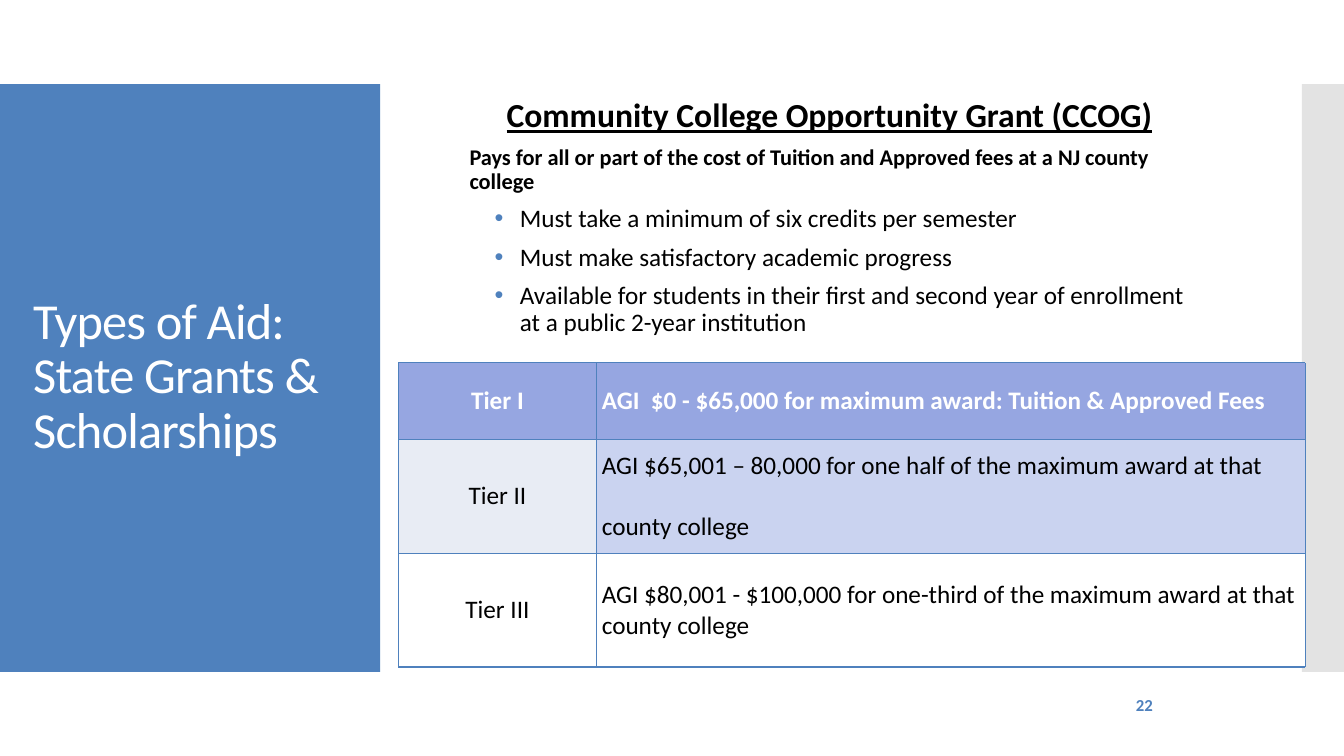
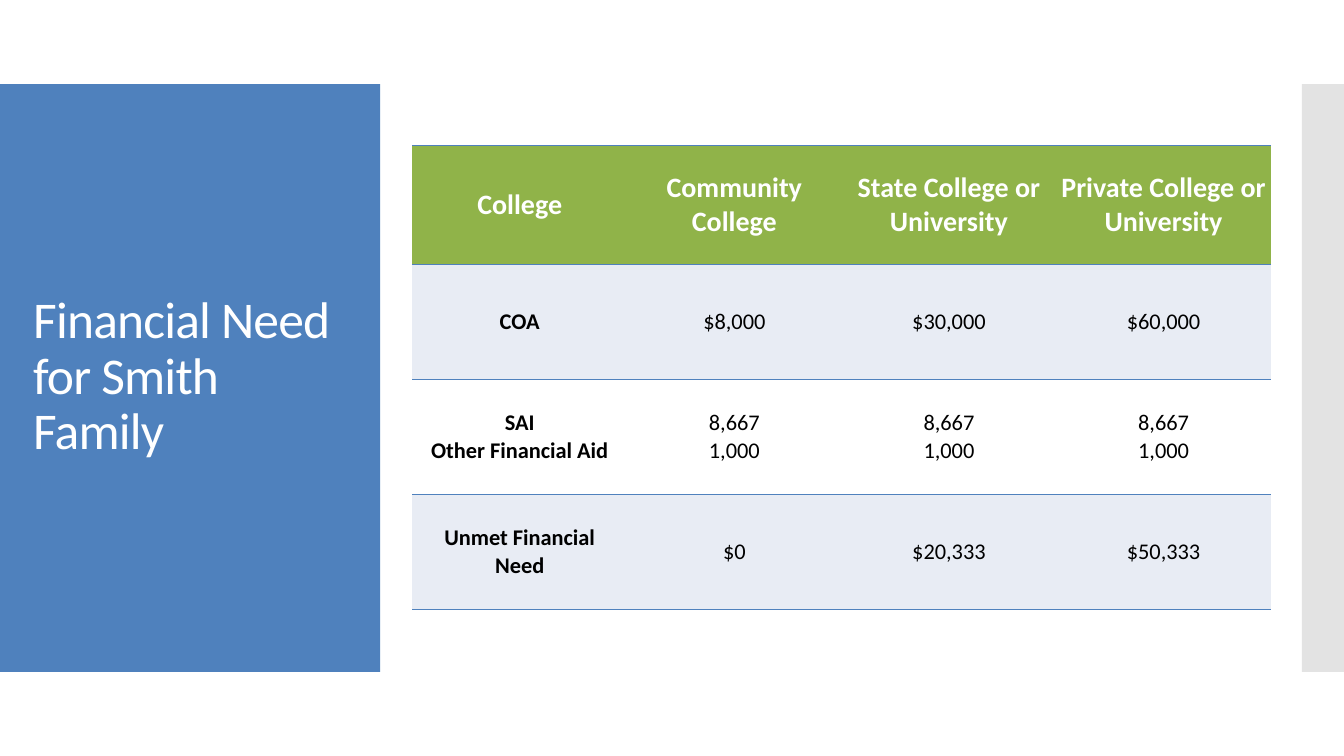
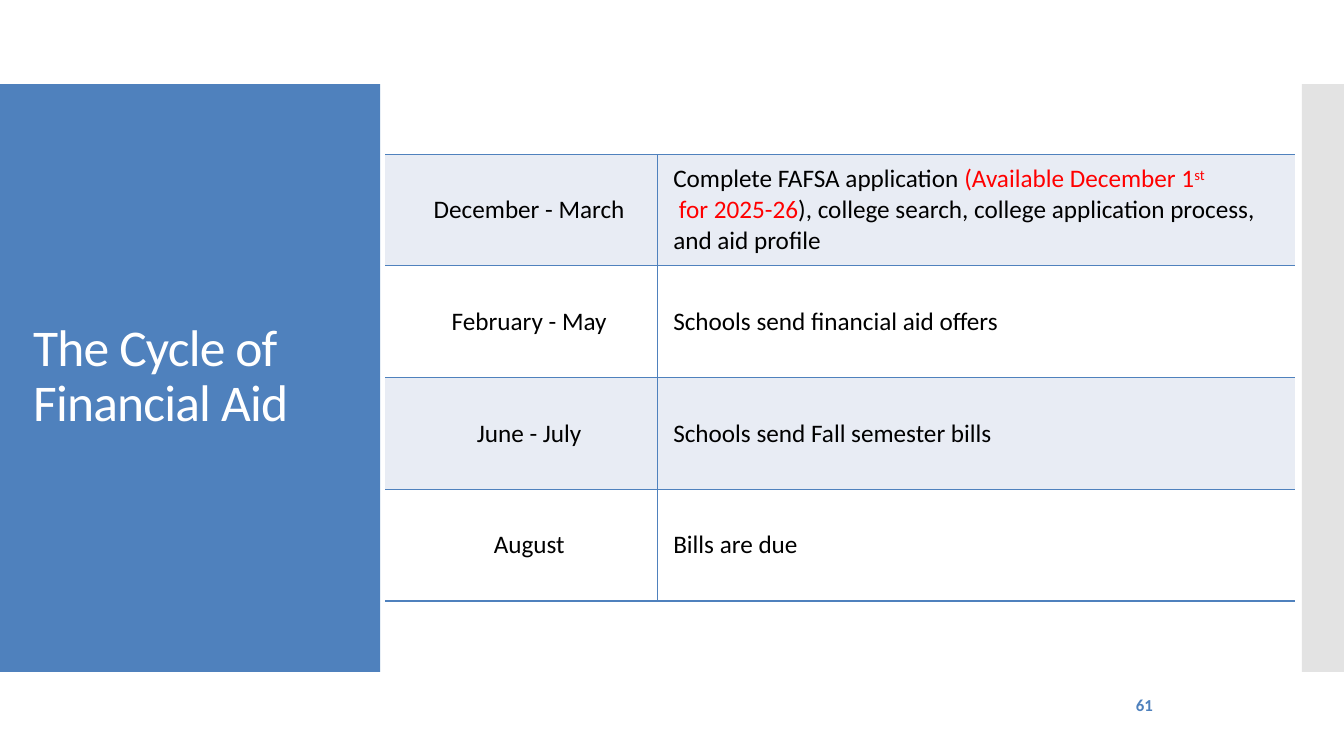
from dataclasses import dataclass

from lxml import etree
from pptx import Presentation
from pptx.dml.color import RGBColor
from pptx.enum.shapes import MSO_CONNECTOR, MSO_SHAPE
from pptx.enum.text import MSO_ANCHOR, PP_ALIGN
from pptx.oxml import parse_xml
from pptx.oxml.ns import nsdecls, qn
from pptx.util import Inches, Pt

RECT, STRAIGHT = MSO_SHAPE.RECTANGLE, MSO_CONNECTOR.STRAIGHT
MIDDLE = MSO_ANCHOR.MIDDLE
LEFT, CENTER, RIGHT = PP_ALIGN.LEFT, PP_ALIGN.CENTER, PP_ALIGN.RIGHT


@dataclass(frozen=True)
class Theme:
    font: str = "Calibri"
    blue: str = "4F81BD"
    grey: str = "C8C8C8"
    white: str = "FFFFFF"
    black: str = "000000"
    red: str = "FF0000"
    green: str = "90B349"
    violet: str = "96A6E1"
    lilac: str = "CAD3F0"
    pale: str = "E8ECF4"
    heading: float = 24
    header: float = 20
    text: float = 18
    small: float = 16
    number: float = 12
    title: float = 36.8
    long_title: float = 36
    rule: float = 1
    divider: float = 0.85


T = Theme()
NO_STYLE = "{2D5ABB26-0587-4C30-8999-92F81FD0307C}"
PAD = Inches(0.05)

# The slide is a grid of 32 columns and 18 rows of square units.
COLS, ROWS = 32, 18
UNIT = Inches(7.5) / ROWS
BAND_TOP, BAND_ROWS = 2, 14


def grid(*units):
    return [round(u * UNIT) for u in units]


def add_run(p, text, size, color, bold=False):
    r = p.add_run()
    r.text = text
    r.font.name, r.font.size, r.font.bold = T.font, Pt(size), bold
    r.font.color.rgb = RGBColor.from_string(color)
    return r


SLIDES = [
    dict(
        title=["Types of Aid:", "State Grants & Scholarships"],
        title_size=T.long_title, number="22",
        at=(9.48, 8.64), cols=[4.73, 16.87], rows=[1.82, 2.71, 2.71],
        fills=[[T.violet, T.violet], [T.pale, T.lilac], [T.white, T.white]],
        header_size=T.text, size=T.text, has_header=True, bold_labels=False,
        aligns=[CENTER, LEFT], inset=PAD, pad=PAD,
        dividers=[9.48, 14.21, 31.08],
        cells=[
            ["Tier I", "AGI  $0 - $65,000 for maximum award: Tuition & Approved Fees"],
            ["Tier II", "AGI $65,001 – 80,000 for one half of the maximum award at that\n"
                        "county college"],
            ["Tier III", "AGI $80,001 - $100,000 for one-third of the maximum award "
                         "at that county college"],
        ],
    ),
    dict(
        title=["Financial Need for Smith Family"], title_size=T.title, number=None,
        at=(9.82, 3.46), cols=[5.11] * 4, rows=[2.83] + [2.74] * 3,
        fills=[[T.green] * 4, [T.pale] * 4, [T.white] * 4, [T.pale] * 4],
        header_size=T.header, size=T.small, has_header=True, bold_labels=True,
        aligns=[CENTER] * 4, inset=PAD, pad=PAD, dividers=[],
        cells=[
            ["College", "Community College", "State College or University",
             "Private College or University"],
            ["COA", "$8,000", "$30,000", "$60,000"],
            ["SAI\nOther Financial Aid"] + ["8,667\n1,000"] * 3,
            ["Unmet Financial Need", "$0", "$20,333", "$50,333"],
        ],
    ),
    dict(
        title=["The Cycle of Financial Aid"], title_size=T.title, number="61",
        at=(9.17, 3.67), cols=[6.26, 15.41], rows=[2.66] * 4,
        fills=[[T.pale] * 2, [T.white] * 2] * 2,
        header_size=T.text, size=T.text, has_header=False, bold_labels=False,
        aligns=[CENTER, LEFT], inset=Inches(0.25), pad=0, dividers=[15.65],
        cells=[
            ["December - March", [
                [("Complete FAFSA application ", T.black, False),
                 ("(Available December 1", T.red, False), ("st", T.red, True)],
                [(" for 2025-26", T.red, False),
                 ("), college search, college application process,", T.black, False)],
                [("and aid profile", T.black, False)],
            ]],
            ["February - May", "Schools send financial aid offers"],
            ["June - July", "Schools send Fall semester bills"],
            ["August", "Bills are due"],
        ],
    ),
]

prs = Presentation()
prs.slide_width, prs.slide_height = grid(COLS, ROWS)
tables = []

for page in SLIDES:
    s = prs.slides.add_slide(prs.slide_layouts[6])

    # Side bands
    for left, width, color in [(0, 9.05, T.blue), (COLS - 1, 1, T.grey)]:
        sp = s.shapes.add_shape(RECT, *grid(left, BAND_TOP, width, BAND_ROWS))
        sp.shadow.inherit = False
        sp.fill.solid()
        sp.fill.fore_color.rgb = RGBColor.from_string(color)
        sp.line.fill.background()
        if color == T.grey:
            tint = sp.fill._xPr.find(".//" + qn("a:srgbClr"))
            etree.SubElement(tint, qn("a:alpha"), val="50000")

    # Title and page number
    boxes = [((0.67, 2.95, 7.73, 12.07), page["title"], page["title_size"], T.white, LEFT)]
    if page["number"]:
        boxes.append(((26.83, 16.42, 0.74, 0.72), [page["number"]], T.number, T.blue, RIGHT))
    for box, lines, size, color, align in boxes:
        tf = s.shapes.add_textbox(*grid(*box)).text_frame
        tf.word_wrap, tf.vertical_anchor = True, MIDDLE
        tf.margin_left = tf.margin_right = tf.margin_top = tf.margin_bottom = PAD
        p = tf.paragraphs[0]
        p.alignment = align
        for i, line in enumerate(lines):
            if i:
                p.add_line_break()
            r = add_run(p, line, size, color, bold=color == T.blue)
            if color == T.white:
                p.line_spacing = 0.9
                r.font._element.set("spc", "-60")

    # Table
    left, top = page["at"]
    width, height = sum(page["cols"]), sum(page["rows"])
    table = s.shapes.add_table(len(page["rows"]), len(page["cols"]),
                               *grid(left, top, width, height)).table
    table._tbl.tblPr.find(qn("a:tableStyleId")).text = NO_STYLE
    table.first_row = page["has_header"]
    table.horz_banding = False
    tables.append(table)
    for column, size in zip(table.columns, grid(*page["cols"])):
        column.width = size
    for row, size in zip(table.rows, grid(*page["rows"])):
        row.height = size

    for i, row in enumerate(page["cells"]):
        header = page["has_header"] and i == 0
        size = page["header_size"] if header else page["size"]
        color = T.white if header else T.black
        for j, content in enumerate(row):
            cell = table.cell(i, j)
            cell.fill.solid()
            cell.fill.fore_color.rgb = RGBColor.from_string(page["fills"][i][j])
            cell.vertical_anchor = MIDDLE
            cell.margin_left = page["inset"]
            cell.margin_right = cell.margin_top = cell.margin_bottom = page["pad"]
            for k, side in enumerate(("lnT", "lnB")):
                cell._tc.tcPr.insert(k, parse_xml(
                    f'<a:{side} {nsdecls("a")} w="{Pt(T.rule)}"><a:solidFill>'
                    f'<a:srgbClr val="{T.blue}"/></a:solidFill></a:{side}>'))
            if isinstance(content, str):
                content = [[(line, color, False)] for line in content.split("\n")]
            bold = header or (page["bold_labels"] and j == 0)
            for k, runs in enumerate(content):
                p = cell.text_frame.add_paragraph() if k else cell.text_frame.paragraphs[0]
                p.alignment = page["aligns"][j]
                for text, run_color, raised in runs:
                    r = add_run(p, text, size, run_color, bold)
                    if raised:
                        r.font._element.set("baseline", "30000")

    for x in page["dividers"]:
        line = s.shapes.add_connector(STRAIGHT, *grid(x, top, x, top + height))
        line.line.width = Pt(T.divider)
        line.line.color.rgb = RGBColor.from_string(T.blue)
        etree.SubElement(line._element.spPr, qn("a:effectLst"))

# The second tier leaves one line free between its two lines.
tables[0].cell(1, 1).text_frame.paragraphs[1].space_before = Pt(22)

# Grant description above the tiers
GRANT = [
    ("Community College Opportunity Grant (CCOG)", T.heading, True, False),
    ("Pays for all or part of the cost of Tuition and Approved fees at a NJ county college",
     T.small, True, False),
    ("Must take a minimum of six credits per semester", T.text, False, True),
    ("Must make satisfactory academic progress", T.text, False, True),
    ("Available for students in their first and second year of enrollment "
     "at a public 2-year institution", T.text, False, True),
]
tf = prs.slides[0].shapes.add_textbox(*grid(11.06, 2.19, 17.38, 6)).text_frame
tf.word_wrap, tf.vertical_anchor = True, MIDDLE
tf.margin_left = tf.margin_right = tf.margin_top = tf.margin_bottom = PAD
for i, (text, size, bold, bulleted) in enumerate(GRANT):
    p = tf.add_paragraph() if i else tf.paragraphs[0]
    p.line_spacing = 0.9
    if i:
        p.space_before = Pt(8)
    if bulleted:
        pPr = p._p.get_or_add_pPr()
        pPr.set("marL", str(Inches(0.5)))
        pPr.set("indent", str(-Inches(0.25)))
        tint = etree.SubElement(pPr, qn("a:buClr"))
        etree.SubElement(tint, qn("a:srgbClr"), val=T.blue)
        etree.SubElement(pPr, qn("a:buFont"), typeface="Arial")
        etree.SubElement(pPr, qn("a:buChar"), char="•")
    r = add_run(p, text, size, T.black, bold)
    if i == 0:
        p.alignment = CENTER
        r.font.underline = True

prs.save("out.pptx")
